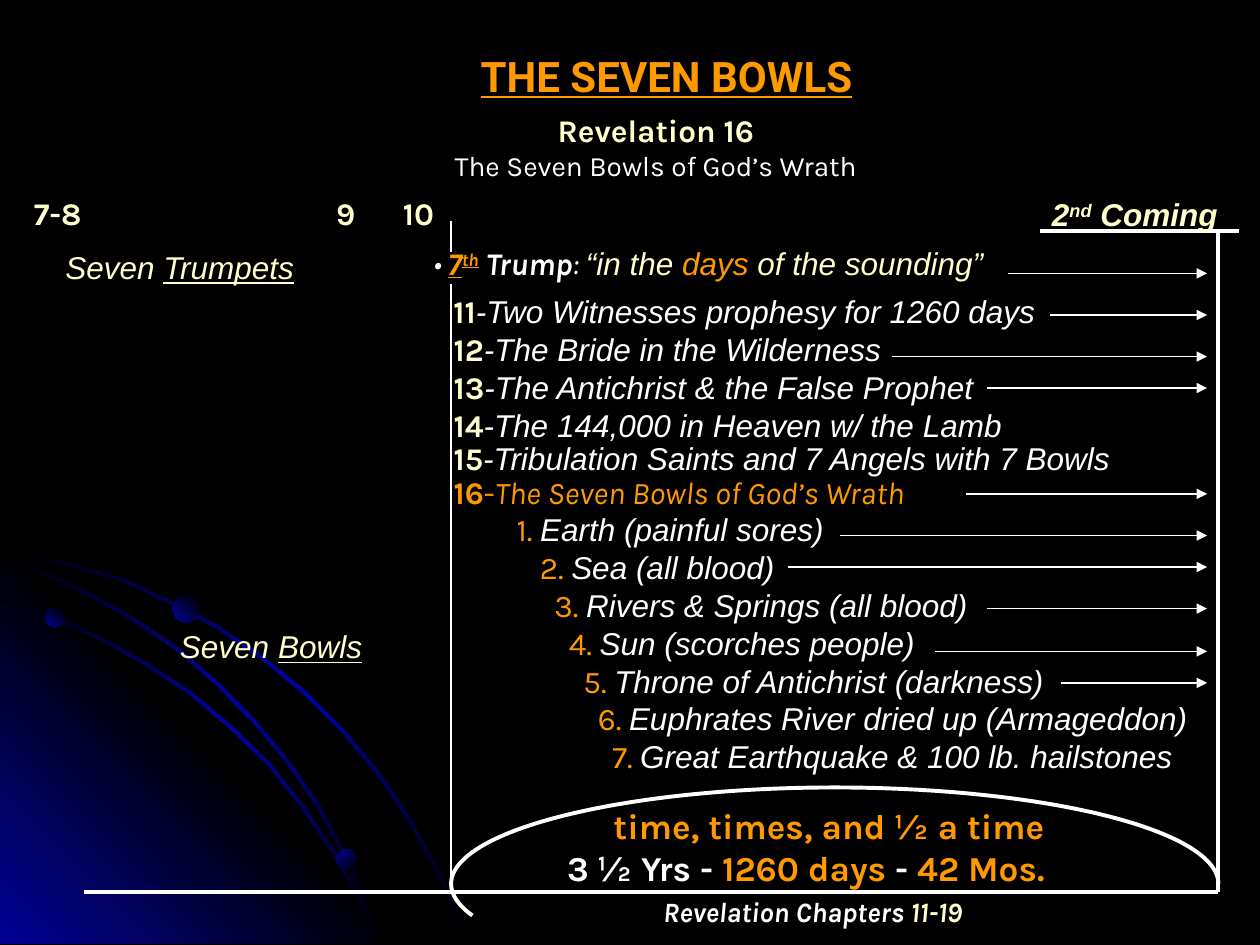
"""Build the Seven Bowls timeline slide for Revelation 16."""
from lxml import etree
from pptx import Presentation
from pptx import util as u
from pptx.dml.color import RGBColor
from pptx.enum import shapes, text
from pptx.oxml import parse_xml
from pptx.oxml.ns import nsdecls, qn

WHITE = RGBColor(0xFF, 0xFF, 0xFF)
CREAM = RGBColor(0xFF, 0xFF, 0xCC)
ORANGE = RGBColor(0xFF, 0x99, 0x00)
BLACK = RGBColor(0x00, 0x00, 0x00)
BLUE = RGBColor(0x01, 0x01, 0x99)
KARLA, ARIAL = "Karla", "Arial"
LEFT, CENTER, RIGHT = text.PP_ALIGN.LEFT, text.PP_ALIGN.CENTER, text.PP_ALIGN.RIGHT

HEADING = [("THE SEVEN BOWLS", "Roboto", ORANGE, "bu")]
CHAPTERS = [
    ("12", "The Bride in the Wilderness"),
    ("13", "The Antichrist & the False Prophet"),
    ("14", "The 144,000 in Heaven w/ the Lamb"),
    ("15", "Tribulation Saints and 7 Angels with 7 Bowls"),
]
BOWLS = [
    "Earth (painful sores)",
    "Sea (all blood)",
    "Rivers & Springs (all blood)",
    "Sun (scorches people)",
    "Throne of Antichrist (darkness)",
    "Euphrates River dried up (Armageddon)",
    "Great Earthquake & 100 lb. hailstones",
]


def chapter_line(number, topic):
    return [(number, KARLA, CREAM, "b"), ("-" + topic, ARIAL, WHITE, "i")]


LABELS = [
    ((2.33, 0.83, 5.75, 0.67), CENTER, [
        (18, [("Revelation 16", KARLA, CREAM, "b")]),
        (16, [("The Seven Bowls of God’s Wrath", KARLA, WHITE, "")])]),
    ((0.17, 1.49, 0.8, 0.4), LEFT, [(18, [("7-8", KARLA, CREAM, "b")])]),
    ((2.57, 1.49, 0.5, 0.4), LEFT, [(18, [("9", KARLA, CREAM, "b")])]),
    ((3.1, 1.49, 0.5, 0.4), LEFT, [(18, [("10", KARLA, CREAM, "b")])]),
    ((8.25, 1.5, 1.55, 0.4), LEFT, [(18, [
        ("2", ARIAL, CREAM, "bi"), ("nd", ARIAL, CREAM, "bi^"), (" Coming", ARIAL, CREAM, "bi")])]),
    ((0.42, 1.92, 2.17, 0.4), LEFT, [(18, [
        ("Seven ", ARIAL, CREAM, "i"), ("Trumpets", ARIAL, CREAM, "iu")])]),
    ((1.33, 4.93, 1.92, 0.4), LEFT, [(18, [
        ("Seven ", ARIAL, CREAM, "i"), ("Bowls", ARIAL, CREAM, "iu")])]),
    ((3.34, 1.89, 5, 0.4), LEFT, [(18, [
        ("• ", KARLA, WHITE, "i"), ("7", KARLA, ORANGE, "biu"), ("th", KARLA, ORANGE, "biu^"),
        (" Trump", KARLA, WHITE, "bi"), (": ", KARLA, WHITE, "i"), ("“in the ", ARIAL, CREAM, "i"),
        ("days", ARIAL, ORANGE, "i"), (" of the sounding”", ARIAL, CREAM, "i")])]),
    ((3.5, 2.27, 5.5, 0.4), LEFT, [
        (18, chapter_line("11", "Two Witnesses prophesy for 1260 days"))]),
    ((4.39, 6.33, 4, 0.77), RIGHT, [
        (20, [("time, times, and ½ a time", KARLA, ORANGE, "b")]),
        (20, [("3 ½ Yrs - ", KARLA, WHITE, "b"), ("1260 days", KARLA, ORANGE, "b"),
              (" - ", KARLA, WHITE, "b"), ("42 Mos.", KARLA, ORANGE, "b")])]),
    ((4.74, 7.05, 3.42, 0.37), CENTER, [(16, [
        ("Revelation Chapters ", KARLA, WHITE, "bi"), ("11-19", KARLA, CREAM, "bi")])]),
]

FRAME_LINES = [
    (0.67, 7.08, 9.67, 7.08, 2.25), (9.67, 1.83, 9.67, 7.08, 2.25), (8.25, 1.83, 9.83, 1.83, 2.25),
    (3.58, 1.75, 3.58, 2, 1.5), (3.58, 2.25, 3.58, 7.08, 1.5),
]
ARROW_END = 9.58
ARROW_STARTS = [
    (8, 2.17), (8.33, 2.5), (7.08, 2.83), (7.83, 3.08), (7.67, 3.92), (6.67, 4.25),
    (6.25, 4.5), (7.83, 4.83), (7.42, 5.17), (8.42, 5.42),
]
CORNER = [(0, 4.27), (3.22, 7.49), (0, 7.49)]
TRAILS = [
    [(0, 4.35), (0.57, 4.47), (0.98, 4.59), (1.36, 4.77), (1.74, 4.97), (2.09, 5.21), (2.42, 5.48),
     (2.72, 5.78), (3, 6.11), (3.25, 6.48), (3.52, 6.98), (3.72, 7.49)],
    [(0, 4.75), (0.41, 4.88), (0.79, 5.05), (1.17, 5.26), (1.52, 5.49), (1.84, 5.76), (2.15, 6.06),
     (2.42, 6.4), (2.66, 6.76), (2.86, 7.12), (3.03, 7.49)],
    [(0, 4.42), (0.39, 4.55), (0.76, 4.73), (1.11, 4.93), (1.44, 5.16), (1.75, 5.43), (2.04, 5.73),
     (2.29, 6.03), (2.54, 6.39), (2.82, 6.93), (3.03, 7.49)],
]
TRAIL_WIDTH = 0.02
ORBS = [(0.36, 4.83, 0.15, 315), (2.67, 6.74, 0.16, 45), (1.37, 4.73, 0.21, 315)]


def inches(*lengths):
    return [u.Inches(length) for length in lengths]


def shade(shape, colours, angle):
    shape.shadow.inherit = False
    shape.line.fill.background()
    shape.fill.background()
    step = 100000 // (len(colours) - 1)
    stops = "".join(f'<a:gs pos="{i * step}"><a:srgbClr val="{colour}"/></a:gs>'
                    for i, colour in enumerate(colours))
    gradient = parse_xml(f'<a:gradFill {nsdecls("a")}><a:gsLst>{stops}</a:gsLst>'
                         f'<a:lin ang="{angle * 60000}" scaled="0"/></a:gradFill>')
    properties = shape._element.spPr
    properties.replace(properties.find(qn("a:noFill")), gradient)


def outline(slide, points):
    builder = slide.shapes.build_freeform(*inches(*points[0]))
    builder.add_line_segments([inches(*point) for point in points[1:]], close=True)
    return builder.convert_to_shape()


def draw_corner(slide):
    ribbons = [trail + [(max(x - TRAIL_WIDTH, 0), y + TRAIL_WIDTH if y < 7.49 else y)
                        for x, y in reversed(trail)] for trail in TRAILS]
    shade(outline(slide, ribbons[0]), [BLACK, BLUE, BLACK], 45)
    shade(outline(slide, CORNER), [BLUE, BLACK, BLUE], 315)
    for ribbon in ribbons[1:]:
        shade(outline(slide, ribbon), [BLACK, BLUE, BLACK], 45)
    for left, top, size, angle in ORBS:
        orb = slide.shapes.add_shape(shapes.MSO_SHAPE.OVAL, *inches(left, top, size, size))
        shade(orb, [BLUE, BLACK], angle)


def draw_line(slide, x1, y1, x2, y2, width, arrow=False):
    line = slide.shapes.add_connector(shapes.MSO_CONNECTOR.STRAIGHT, *inches(x1, y1, x2, y2))
    line.line.color.rgb = WHITE
    line.line.width = u.Pt(width)
    if arrow:
        etree.SubElement(line.line._get_or_add_ln(), qn("a:tailEnd"), type="triangle")
    etree.SubElement(line._element.spPr, qn("a:effectLst"))


def draw_arch(slide):
    arch = slide.shapes.add_shape(shapes.MSO_SHAPE.ARC, *inches(3.58, 6.25, 6.09, 1.53))
    arch.adjustments[0], arch.adjustments[1] = 105, 0
    arch.shadow.inherit = False
    arch.fill.background()
    arch.line.color.rgb = WHITE
    arch.line.width = u.Pt(2.25)


def write(box, place, lines, align=LEFT, anchor=text.MSO_ANCHOR.MIDDLE):
    box.left, box.top, box.width, box.height = inches(*place)
    frame = box.text_frame
    frame.word_wrap = True
    frame.auto_size = text.MSO_AUTO_SIZE.NONE
    frame.vertical_anchor = anchor
    for i, (size, runs) in enumerate(lines):
        paragraph = frame.add_paragraph() if i else frame.paragraphs[0]
        paragraph.alignment = align
        paragraph.space_before = u.Pt(0)
        for words, face, colour, flags in runs:
            run = paragraph.add_run()
            run.text = words
            font = run.font
            font.name, font.size, font.color.rgb = face, u.Pt(size), colour
            font.bold, font.italic, font.underline = (flag in flags for flag in "biu")
            if "^" in flags:
                run._r.get_or_add_rPr().set("baseline", "30000")
    return frame.paragraphs


def unbullet(paragraph, margin=0.0):
    properties = paragraph._p.get_or_add_pPr()
    properties.set("marL", str(u.Inches(margin)))
    properties.set("indent", "0")
    etree.SubElement(properties, qn("a:buNone"))


def main():
    deck = Presentation()
    deck.slide_width, deck.slide_height = inches(10, 7.5)
    slide = deck.slides.add_slide(deck.slide_layouts.get_by_name("Two Content"))
    slide.background.fill.solid()
    slide.background.fill.fore_color.rgb = BLACK
    title, chapters, bowls = list(slide.placeholders)[:3]

    write(title, (3.25, 0.33, 4.08, 0.54), [(24, HEADING)], CENTER)
    topics = [(18, chapter_line(*chapter)) for chapter in CHAPTERS]
    topics.append((18, [("16", KARLA, ORANGE, "b"), ("-", KARLA, ORANGE, ""),
                        ("The Seven Bowls of God’s Wrath", KARLA, ORANGE, "i")]))
    rows = write(chapters, (3.5, 2.57, 6.17, 1.6), topics, anchor=text.MSO_ANCHOR.TOP)
    for i, row in enumerate(rows):
        row.line_spacing = 1.0 if i < 3 else 0.9
        unbullet(row)
    plagues = [(18, [(f"{n}. ", KARLA, ORANGE, ""), (bowl, ARIAL, WHITE, "i")])
               for n, bowl in enumerate(BOWLS, 1)]
    rows = write(bowls, (4, 4, 5.92, 2.2), plagues, anchor=text.MSO_ANCHOR.TOP)
    for i, row in enumerate(rows):
        unbullet(row, 0.07 + 0.115 * i if i else 0)

    draw_corner(slide)
    for line in FRAME_LINES:
        draw_line(slide, *line)
    draw_arch(slide)
    for start, y in ARROW_STARTS:
        draw_line(slide, start, y, ARROW_END, y, 0.75, arrow=True)
    for place, align, lines in LABELS:
        write(slide.shapes.add_textbox(*inches(*place)), place, lines, align)
    deck.save("out.pptx")


if __name__ == "__main__":
    main()
